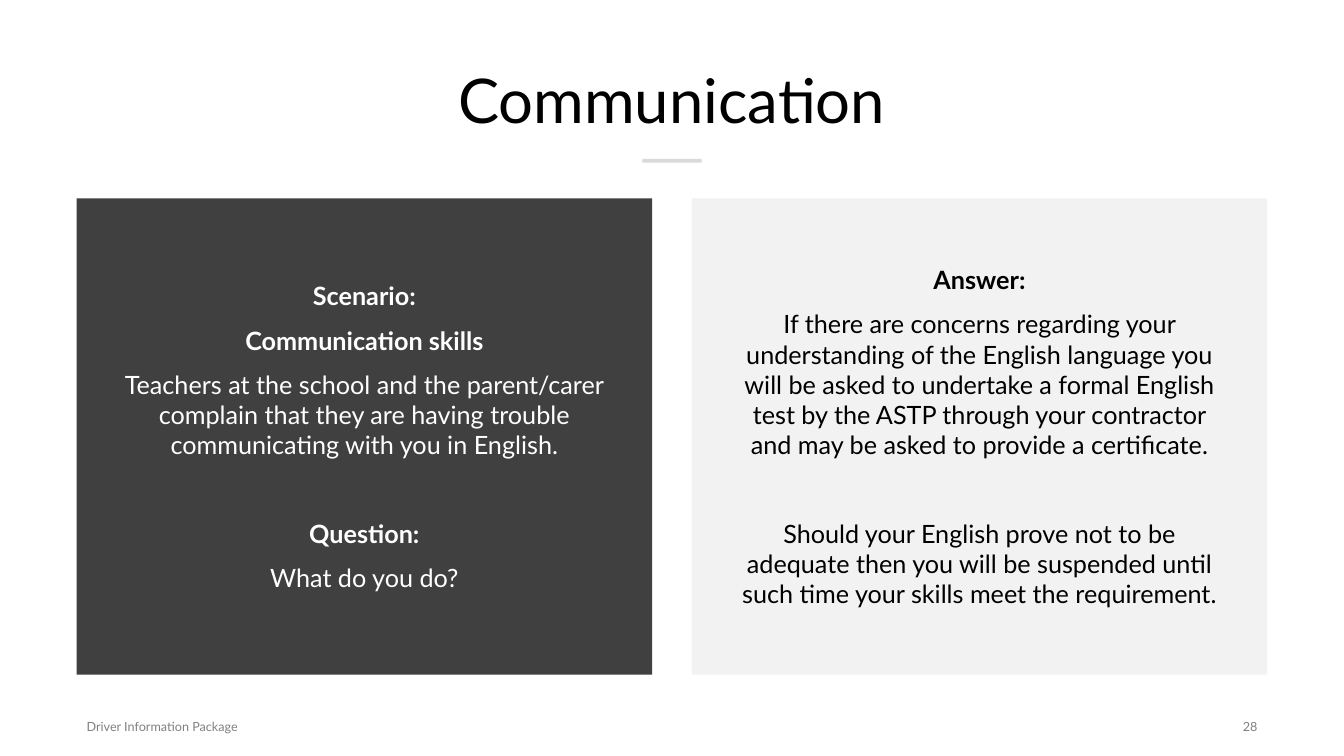
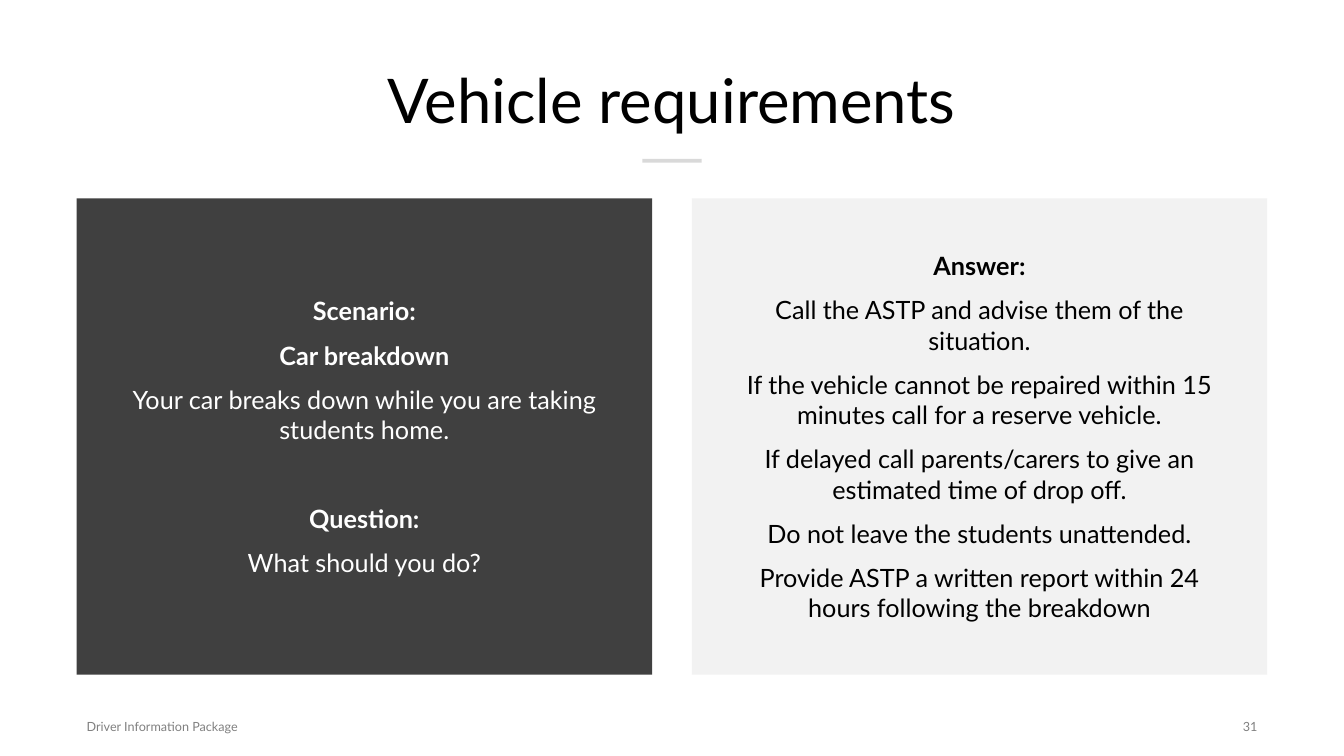
from pptx import Presentation
from pptx.util import Pt
from pptx.dml.color import RGBColor as RGB
from pptx.enum.shapes import MSO_SHAPE as Form
from pptx.enum.text import MSO_ANCHOR as Anchor, PP_ALIGN as Align

HUE = {"dark": "404040", "pale": "F2F2F2", "rule": "D9D9D9",
       "white": "FFFFFF", "black": "000000", "grey": "808080"}
FONT = "Lato"
WIDE, HIGH = 960, 540
SPAN, GAP = 850.4, 28.35
LEFT = (WIDE - SPAN) / 2
HALF = (SPAN - GAP) / 2
TOP, TALL = 141.75, 340.2
FOOT = 504.5
BAR = 42.5
NUM = 85


def block(slide, box, fill):
    shape = slide.shapes.add_shape(Form.RECTANGLE, *map(Pt, box))
    shape.shadow.inherit = False
    shape.fill.solid()
    shape.fill.fore_color.rgb = RGB.from_string(HUE[fill])
    shape.line.fill.background()
    return shape


def write(slide, text, box, size=18, hue="black", align=Align.CENTER, fill=None, pad=None):
    if fill:
        shape = block(slide, box, fill)
    else:
        shape = slide.shapes.add_textbox(*map(Pt, box))
    frame = shape.text_frame
    frame.word_wrap = True
    frame.vertical_anchor = Anchor.MIDDLE
    if pad:
        frame.margin_left = frame.margin_right = Pt(pad)
        frame.margin_top = frame.margin_bottom = Pt(pad)
    rows = [(text, False, 0)] if isinstance(text, str) else text
    for i, (words, bold, space) in enumerate(rows):
        para = frame.paragraphs[0] if i == 0 else frame.add_paragraph()
        para.alignment = align
        para.space_before = Pt(space)
        run = para.add_run()
        run.text = words
        font = run.font
        font.name, font.size, font.bold = FONT, Pt(size), bold
        font.color.rgb = RGB.from_string(HUE[hue])


NEAR, FAR = 10, 41.6
PAGES = [
    ("Communication", "28", [
        ("Scenario:", True, NEAR),
        ("Communication skills", True, NEAR),
        ("Teachers at the school and the parent/carer complain that they are "
         "having trouble communicating with you in English.", False, NEAR),
        ("Question:", True, FAR),
        ("What do you do?", False, NEAR),
    ], [
        ("Answer:", True, NEAR),
        ("If there are concerns regarding your understanding of the English "
         "language you will be asked to undertake a formal English test by the "
         "ASTP through your contractor and may be asked to provide a "
         "certificate.", False, NEAR),
        ("Should your English prove not to be adequate then you will be "
         "suspended until such time your skills meet the requirement.", False, FAR),
    ]),
    ("Vehicle requirements", "31", [
        ("Scenario:", True, NEAR),
        ("Car breakdown", True, NEAR),
        ("Your car breaks down while you are taking students home.", False, NEAR),
        ("Question:", True, FAR),
        ("What should you do?", False, NEAR),
    ], [
        ("Answer:", True, NEAR),
        ("Call the ASTP and advise them of the situation.", False, NEAR),
        ("If the vehicle cannot be repaired within 15 minutes call for a "
         "reserve vehicle.", False, NEAR),
        ("If delayed call parents/carers to give an estimated time of drop "
         "off.", False, NEAR),
        ("Do not leave the students unattended.", False, NEAR),
        ("Provide ASTP a written report within 24 hours following the "
         "breakdown", False, NEAR),
    ]),
]

deck = Presentation()
deck.slide_width, deck.slide_height = Pt(WIDE), Pt(HIGH)

for title, page, case, reply in PAGES:
    slide = deck.slides.add_slide(deck.slide_layouts[6])
    block(slide, ((WIDE - BAR) / 2, 113.4, BAR, 2.8), "rule")
    write(slide, title, (LEFT, GAP, SPAN, 85), size=44)
    write(slide, "Driver Information Package", (LEFT, FOOT, 340, GAP),
          size=9, hue="grey", align=Align.LEFT)
    write(slide, page, (LEFT + SPAN - NUM, FOOT, NUM, GAP),
          size=9, hue="grey", align=Align.RIGHT)
    sides = [(case, "dark", "white"), (reply, "pale", "black")]
    for i, (rows, fill, hue) in enumerate(sides):
        write(slide, rows, (LEFT + i * (HALF + GAP), TOP, HALF, TALL),
              hue=hue, fill=fill, pad=GAP)

deck.save("out.pptx")
